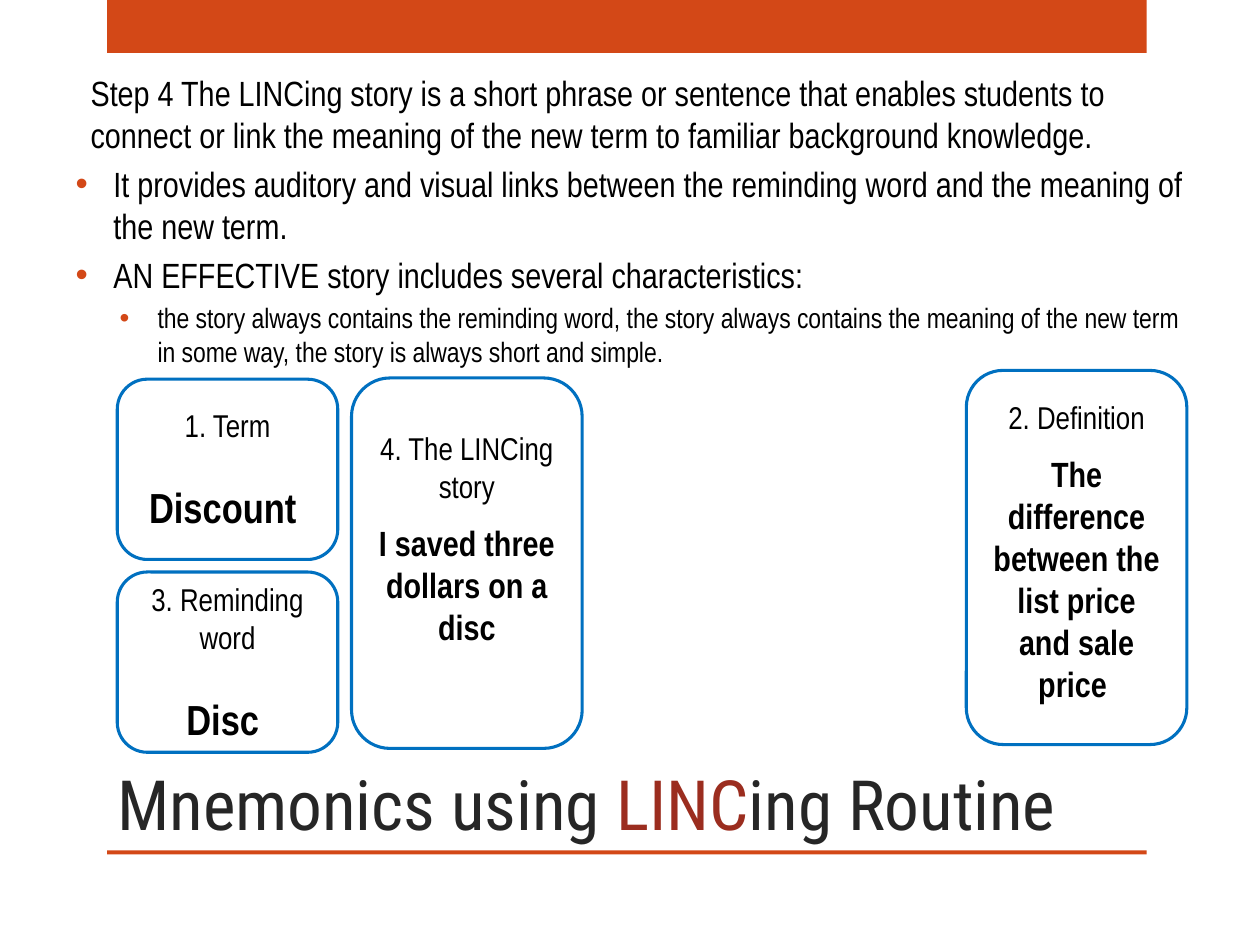
from dataclasses import dataclass

from lxml.etree import SubElement
from pptx import Presentation
from pptx.dml.color import RGBColor
from pptx.enum.shapes import MSO_SHAPE
from pptx.enum.text import MSO_ANCHOR, MSO_AUTO_SIZE, PP_ALIGN
from pptx.oxml.ns import qn
from pptx.util import Pt


@dataclass(frozen=True)
class Theme:
    accent: str = "D34817"
    outline: str = "0070C0"
    ink: str = "000000"
    title_ink: str = "262626"
    highlight: str = "9B2D1F"
    title_font: str = "Roboto Condensed"
    body_font: str = "Arial Narrow"
    title_size: float = 39.6
    body_size: float = 20
    detail_size: float = 16
    label_size: float = 18
    word_size: float = 24


THEME = Theme()


def write(paragraph, text, size=THEME.body_size, font=THEME.body_font,
          color=THEME.ink, bold=False):
    run = paragraph.add_run()
    run.text = text
    run.font.size = Pt(size)
    run.font.name = font
    run.font.bold = bold
    run.font.color.rgb = RGBColor.from_string(color)


def place(shape, left, top, width, height):
    shape.left, shape.top = Pt(left), Pt(top)
    shape.width, shape.height = Pt(width), Pt(height)


def prepare_frame(shape, anchor):
    frame = shape.text_frame
    frame.word_wrap = True
    frame.auto_size = MSO_AUTO_SIZE.NONE
    frame.vertical_anchor = anchor
    return frame


def set_list_format(paragraph, margin, hanging=0, bullet=False):
    properties = paragraph._p.get_or_add_pPr()
    properties.set("marL", str(Pt(margin)))
    properties.set("indent", str(-Pt(hanging)))
    if bullet:
        color = SubElement(properties, qn("a:buClr"))
        SubElement(color, qn("a:srgbClr"), val=THEME.accent)
        SubElement(properties, qn("a:buFont"), typeface="Arial")
        SubElement(properties, qn("a:buChar"), char="•")
    else:
        SubElement(properties, qn("a:buNone"))


def add_bar(slide, top, height):
    bar = slide.shapes.add_shape(
        MSO_SHAPE.RECTANGLE, Pt(61.2), Pt(top), Pt(594), Pt(height))
    bar.shadow.inherit = False
    bar.fill.solid()
    bar.fill.fore_color.rgb = RGBColor.from_string(THEME.accent)
    bar.line.fill.background()


def fill_title(title):
    place(title, 59.8, 429.1, 635.8, 56.9)
    paragraph = prepare_frame(title, MSO_ANCHOR.BOTTOM).paragraphs[0]
    paragraph.alignment = PP_ALIGN.LEFT
    for text, color in (("Mnemonics using ", THEME.title_ink),
                        ("LINC", THEME.highlight),
                        ("ing Routine", THEME.title_ink)):
        write(paragraph, text, size=THEME.title_size,
              font=THEME.title_font, color=color)


def fill_body(body, items):
    place(body, 36, 46.1, 648, 180)
    frame = prepare_frame(body, MSO_ANCHOR.MIDDLE)
    frame.margin_bottom = Pt(25)
    for index, (text, level, margin, hanging, size) in enumerate(items):
        paragraph = frame.add_paragraph() if index else frame.paragraphs[0]
        paragraph.level = level
        paragraph.space_before = Pt(size * 0.2 if index else 0)
        set_list_format(paragraph, margin, hanging, bullet=hanging > 0)
        write(paragraph, text, size=size)


def add_card(slide, box, label, text, size, gap, bottom=3.6):
    card = slide.shapes.add_shape(
        MSO_SHAPE.ROUNDED_RECTANGLE, *(Pt(length) for length in box))
    card.shadow.inherit = False
    card.fill.background()
    card.line.color.rgb = RGBColor.from_string(THEME.outline)
    card.line.width = Pt(1.75)
    frame = prepare_frame(card, MSO_ANCHOR.MIDDLE)
    frame.margin_bottom = Pt(bottom)
    heading, content = frame.paragraphs[0], frame.add_paragraph()
    heading.alignment = content.alignment = PP_ALIGN.CENTER
    content.space_before = Pt(gap)
    write(heading, label, size=THEME.label_size)
    write(content, text, size=size, bold=True)


def main():
    presentation = Presentation()
    presentation.slide_width, presentation.slide_height = Pt(720), Pt(540)
    slide = presentation.slides.add_slide(presentation.slide_layouts[1])
    add_bar(slide, 0, 30.2)
    add_bar(slide, 486, 2.2)
    fill_title(slide.shapes.title)
    fill_body(slide.placeholders[1], (
        ("Step 4 The LINCing story is a short phrase or sentence that enables "
         "students to connect or link the meaning of the new term to familiar "
         "background knowledge.", 0, 8.6, 0, THEME.body_size),
        ("It provides auditory and visual links between the reminding word "
         "and the meaning of the new term.", 0, 21.6, 21.6, THEME.body_size),
        ("AN EFFECTIVE story includes several characteristics:",
         0, 21.6, 21.6, THEME.body_size),
        ("the story always contains the reminding word, the story always "
         "contains the meaning of the new term in some way, the story is "
         "always short and simple.", 1, 46.8, 21.6, THEME.detail_size),
    ))
    words = (("1. Term", "Discount "), ("3. Reminding word", "Disc "))
    for row, (label, word) in enumerate(words):
        add_card(slide, (67, 216.7 + row * 110.2, 126, 103), label, word,
                 THEME.word_size, gap=21.6)
    add_card(slide, (552.2, 211.7, 126, 213.8), "2. Definition",
             "The difference between the list price and sale price ",
             THEME.body_size, gap=9.6, bottom=10.6)
    add_card(slide, (200.9, 216, 131.8, 211.7), "4. The LINCing story",
             "I saved three dollars on a disc",
             THEME.body_size, gap=9.6, bottom=32)
    presentation.save("out.pptx")


if __name__ == "__main__":
    main()
